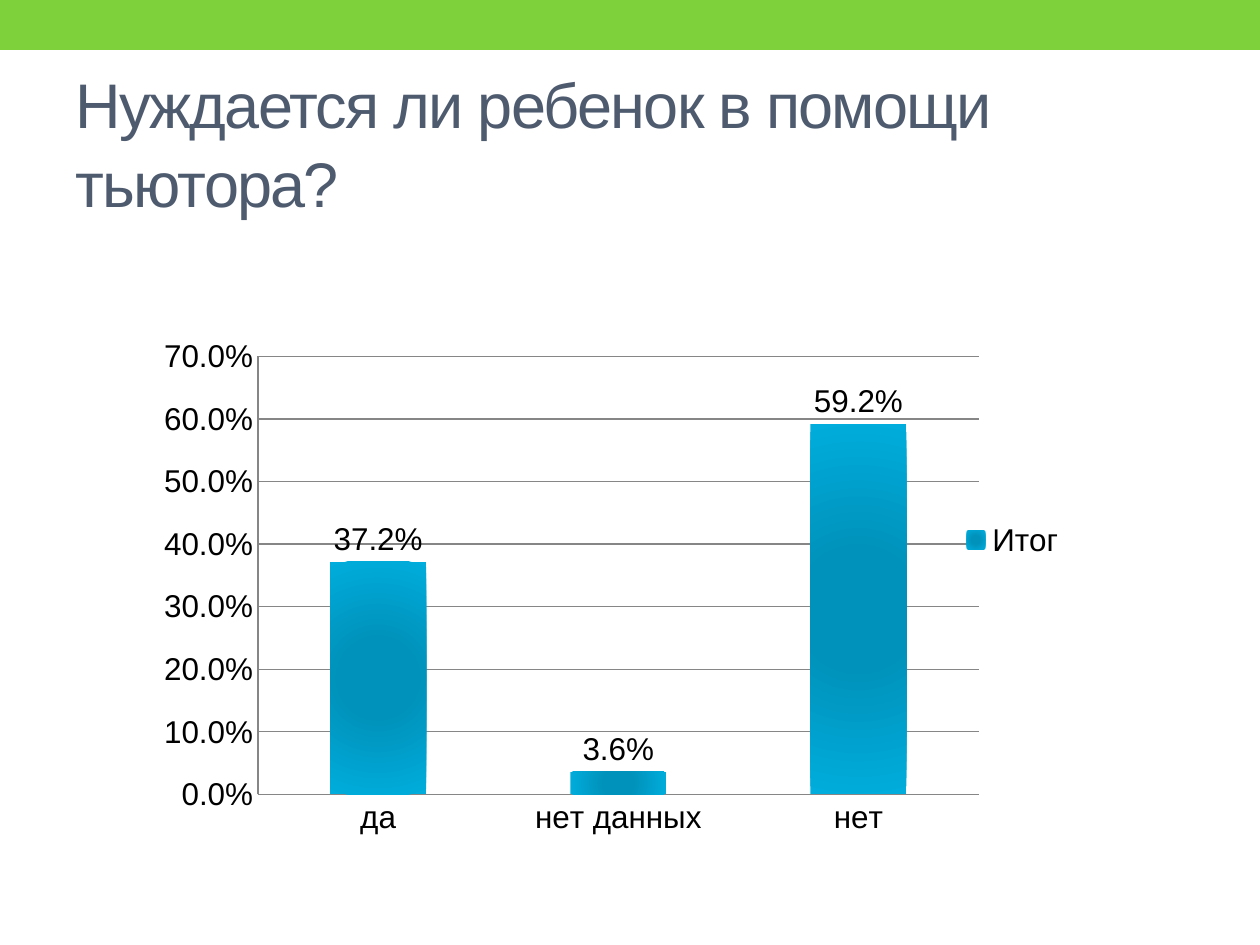
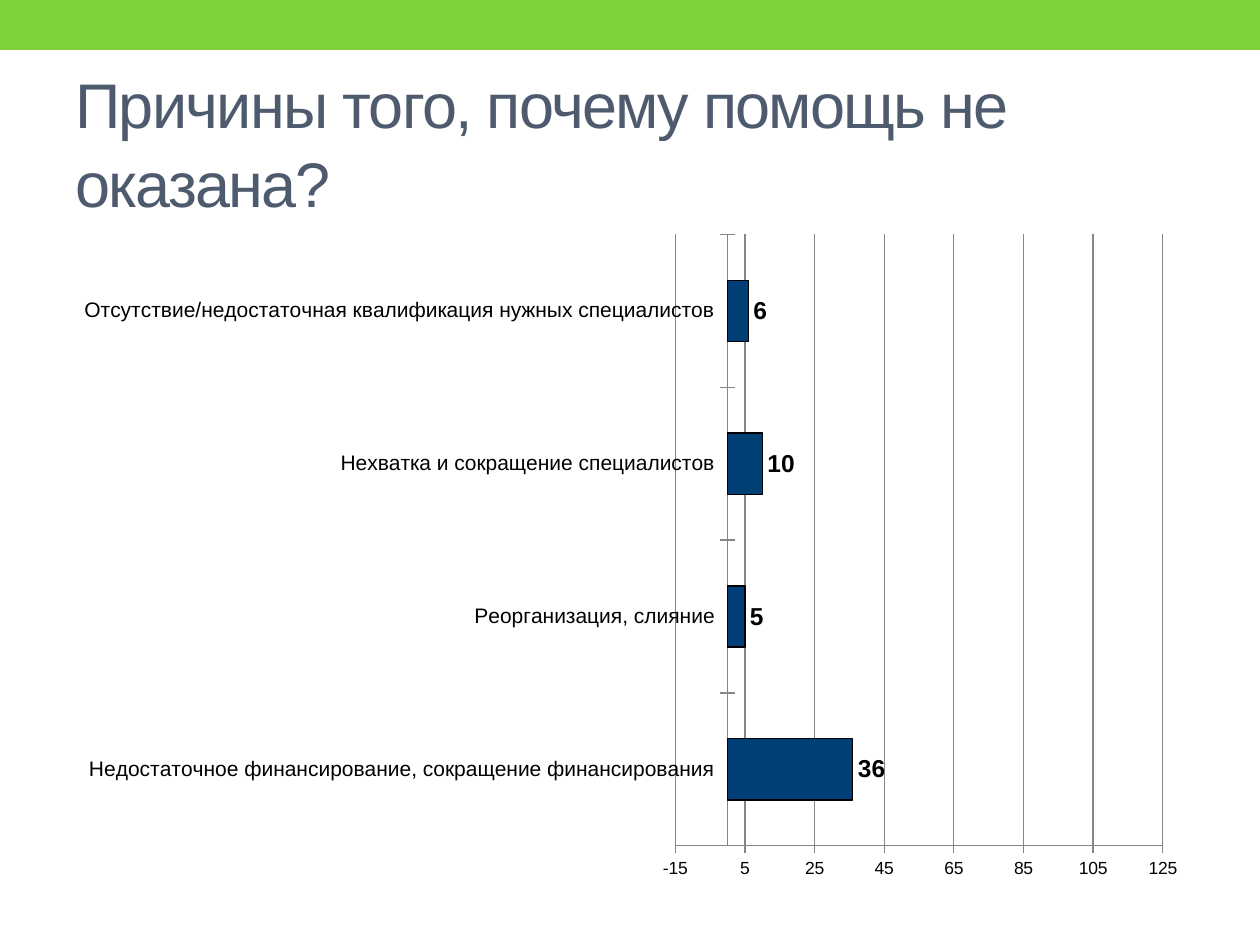
from dataclasses import dataclass

from lxml.etree import SubElement
from pptx import Presentation
from pptx.chart.data import CategoryChartData
from pptx.dml.color import RGBColor
from pptx.enum.chart import XL_CHART_TYPE, XL_LABEL_POSITION, XL_LEGEND_POSITION, XL_TICK_MARK
from pptx.enum.shapes import MSO_SHAPE
from pptx.enum.text import MSO_ANCHOR
from pptx.oxml import parse_xml
from pptx.oxml.ns import nsdecls, qn
from pptx.util import Pt


@dataclass(frozen=True)
class Theme:
    font: str = "Arial"
    band: str = "7FD13B"
    title: str = "4E5B6F"
    text: str = "000000"
    grid: str = "868686"
    cyan: str = "00ADDC"
    deep_cyan: str = "0092BB"
    navy: str = "003F75"
    title_size: int = 36
    share_size: int = 18
    label_size: int = 14
    reason_size: int = 12
    scale_size: int = 10


THEME = Theme()
SLIDE_BOX = (0, 0, 1260, 945)
SHARE_BOX = (164, 244, 915, 592)
REASON_BOX = (63, 221, 1134, 672)


def px(n):
    return round(n * 914400 / 126)


def rgb(value):
    return RGBColor.from_string(value)


def style_font(font, size, color=THEME.text, bold=False):
    font.name = THEME.font
    font.size = Pt(size)
    font.bold = bold
    font.color.rgb = rgb(color)


def style_line(line, color):
    line.color.rgb = rgb(color)
    line.width = Pt(0.75)


def add_frame(slide, box, title):
    x, y, w, h = box
    s = slide.shapes.add_shape(MSO_SHAPE.RECTANGLE, px(x), px(y), px(w), px(50))
    s.shadow.inherit = False
    s.fill.solid()
    s.fill.fore_color.rgb = rgb(THEME.band)
    s.line.fill.background()
    sp = slide.shapes.add_textbox(px(x + 63), px(y + 73), px(w - 126), px(136))
    tf = sp.text_frame
    tf.word_wrap = True
    tf.vertical_anchor = MSO_ANCHOR.MIDDLE
    tf.text = title
    p = tf.paragraphs[0]
    p.line_spacing = 1.05
    r = p.runs[0]
    style_font(r.font, THEME.title_size, THEME.title)
    r.font._element.set("spc", "-100")


def set_plot_box(chart, fractions):
    area = chart._chartSpace.chart.plotArea
    for old in area.findall(qn("c:layout")):
        area.remove(old)
    layout = parse_xml(f"<c:layout {nsdecls('c')}/>")
    manual = SubElement(layout, qn("c:manualLayout"))
    entries = [("layoutTarget", "inner"), ("xMode", "edge"), ("yMode", "edge")]
    entries += zip("xywh", fractions)
    for tag, value in entries:
        SubElement(manual, qn(f"c:{tag}")).set("val", str(value))
    area.insert(0, layout)


def add_bars(slide, box, kind, name, values, number_format, size, tick, plot_box):
    data = CategoryChartData(number_format=number_format)
    data.categories = list(values)
    data.add_series(name, list(values.values()))
    chart = slide.shapes.add_chart(kind, *map(px, box), data).chart
    chart.has_title = False
    chart.has_legend = False
    style_font(chart.font, size)
    for axis in (chart.category_axis, chart.value_axis):
        axis.major_tick_mark = tick
        axis.minor_tick_mark = XL_TICK_MARK.NONE
        style_line(axis.format.line, THEME.grid)
    axis = chart.value_axis
    axis.has_major_gridlines = True
    style_line(axis.major_gridlines.format.line, THEME.grid)
    axis.tick_labels.number_format = number_format
    axis.tick_labels.number_format_is_linked = False
    plot = chart.plots[0]
    plot.gap_width = 150
    plot.vary_by_categories = False
    plot.has_data_labels = True
    labels = plot.data_labels
    labels.show_value = True
    labels.position = XL_LABEL_POSITION.OUTSIDE_END
    labels.number_format = number_format
    labels.number_format_is_linked = False
    style_font(labels.font, size)
    series = plot.series[0]
    series.invert_if_negative = False
    set_plot_box(chart, plot_box)
    return chart, series


def fill_radial(fill, inner, outer):
    fill.gradient()
    grad = fill._xPr.find(qn("a:gradFill"))
    stops = "".join(
        f'<a:gs pos="{pos}"><a:srgbClr val="{color}"/></a:gs>'
        for pos, color in ((0, inner), (30000, inner), (100000, outer))
    )
    radial = parse_xml(
        f'<a:gradFill {nsdecls("a")} rotWithShape="1"><a:gsLst>{stops}</a:gsLst>'
        '<a:path path="circle"><a:fillToRect l="50000" t="50000" r="50000" b="50000"/>'
        "</a:path></a:gradFill>"
    )
    grad.getparent().replace(grad, radial)


def add_share_chart(slide, box):
    values = {"да": 0.372, "нет данных": 0.036, "нет": 0.592}
    chart, series = add_bars(
        slide, box, XL_CHART_TYPE.COLUMN_CLUSTERED, "Итог", values, "0.0%",
        THEME.share_size, XL_TICK_MARK.NONE, (0.1, 0.19, 0.79, 0.74),
    )
    chart.value_axis.minimum_scale = 0
    chart.value_axis.maximum_scale = 0.7
    chart.value_axis.major_unit = 0.1
    fill_radial(series.format.fill, THEME.deep_cyan, THEME.cyan)
    chart.has_legend = True
    chart.legend.position = XL_LEGEND_POSITION.RIGHT
    chart.legend.include_in_layout = False
    style_font(chart.legend.font, THEME.share_size)


def add_reason_chart(slide, box):
    values = {
        "Недостаточное финансирование, сокращение финансирования": 36,
        "Реорганизация, слияние": 5,
        "Нехватка и сокращение специалистов": 10,
        "Отсутствие/недостаточная квалификация нужных специалистов": 6,
    }
    chart, series = add_bars(
        slide, box, XL_CHART_TYPE.BAR_CLUSTERED, "Series 1", values, "General",
        THEME.scale_size, XL_TICK_MARK.CROSS, (0.54, 0.02, 0.43, 0.91),
    )
    chart.value_axis.minimum_scale = -15
    chart.value_axis.maximum_scale = 125
    chart.value_axis.major_unit = 20
    style_font(chart.category_axis.tick_labels.font, THEME.reason_size)
    style_font(chart.plots[0].data_labels.font, THEME.label_size, bold=True)
    series.format.fill.solid()
    series.format.fill.fore_color.rgb = rgb(THEME.navy)
    style_line(series.format.line, THEME.text)


def main():
    prs = Presentation()
    prs.slide_width, prs.slide_height = map(px, SLIDE_BOX[2:])
    pages = (
        ("Нуждается ли ребенок в помощи тьютора?", add_share_chart, SHARE_BOX),
        ("Причины того, почему помощь не оказана?", add_reason_chart, REASON_BOX),
    )
    for title, add_content, box in pages:
        slide = prs.slides.add_slide(prs.slide_layouts[6])
        add_frame(slide, SLIDE_BOX, title)
        add_content(slide, box)
    prs.save("out.pptx")


if __name__ == "__main__":
    main()
